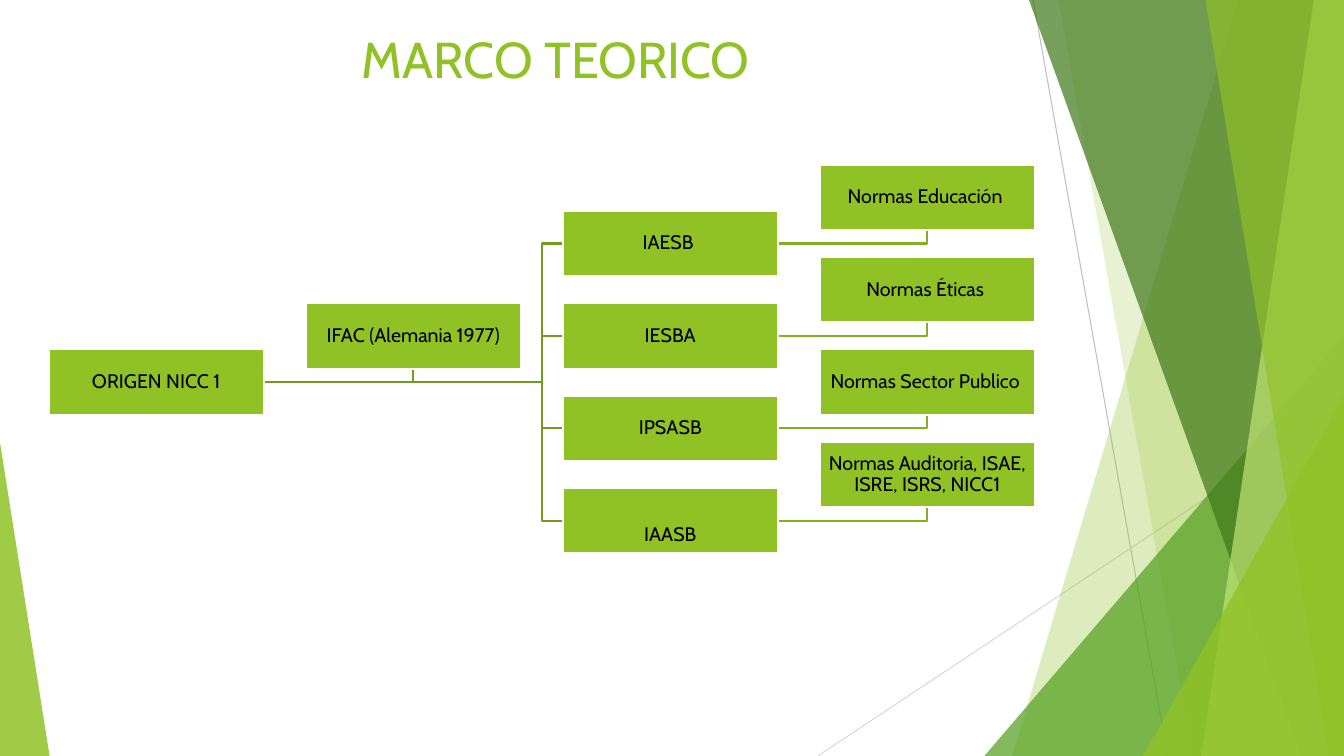
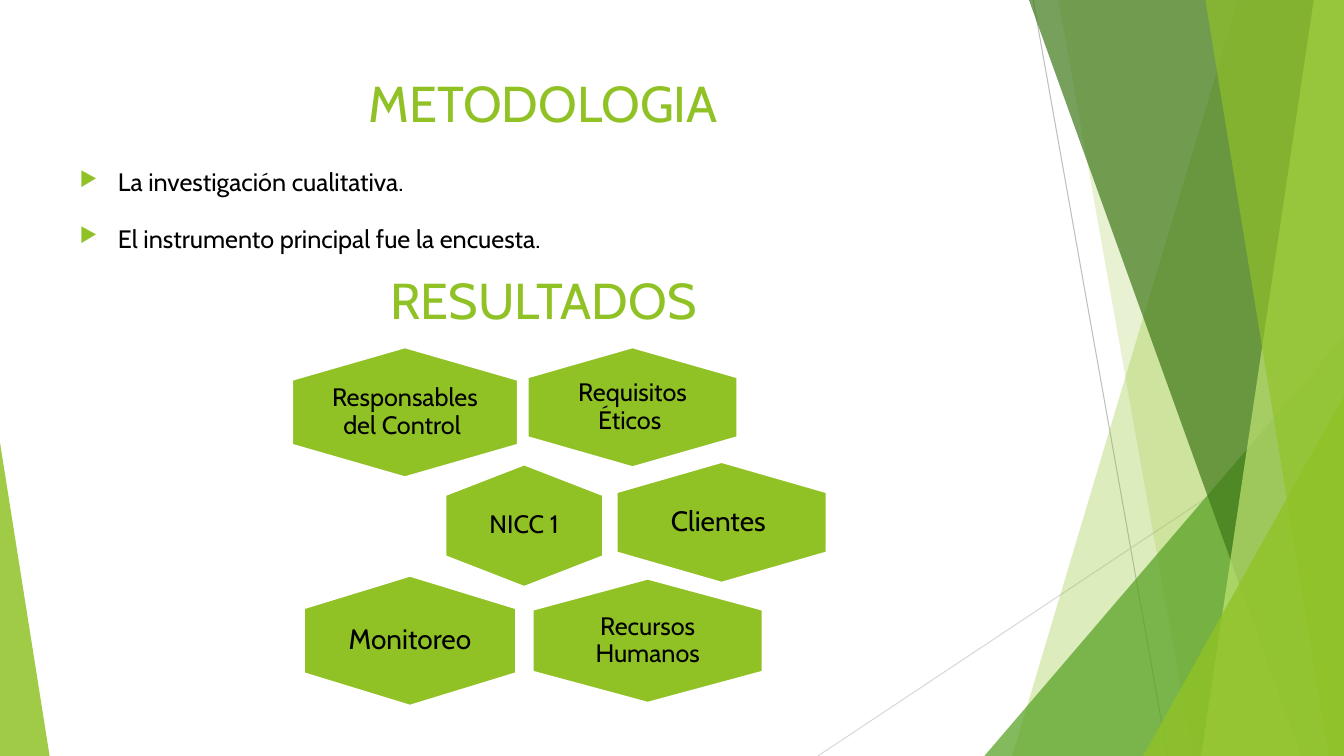
from lxml import etree
from pptx import Presentation, util as u
from pptx.dml.color import RGBColor
from pptx.enum import shapes, text
from pptx.oxml.ns import qn

FONT = "Cabin"
COLORS = {
    "green": "90C226", "leaf": "54A021", "forest": "3F7819", "lime": "C0E474",
    "trunk": "739B1E", "twig": "83B022", "silver": "BFBFBF", "mist": "D9D9D9",
    "white": "FFFFFF", "black": "000000",
}
COLUMNS, ROWS = 16, 9

# Organisation chart, in grid cells
BOX_WIDTH, BOX_HEIGHT = 2.56, 0.78
CHART_LEFT, CHART_TOP = 0.58, 1.96
COLUMN_STEP, ROW_STEP = 3.06, 0.55
BRANCH_GAP = 0.25

ORIGIN, FEDERATION = "ORIGEN NICC 1", "IFAC (Alemania 1977)"
BOARDS = {
    "IAESB ": "Normas Educación ",
    "IESBA": "Normas Éticas ",
    "IPSASB": "Normas Sector Publico ",
    "IAASB": "Normas Auditoria, ISAE, ISRE, ISRS, NICC1",
}

# Label, text size, centre column, centre row, width, height
RESULTS = [
    ("Requisitos Éticos ", 18, 7.53, 4.85, 2.5, 1.43),
    ("Responsables del Control ", 18, 4.82, 4.91, 2.69, 1.55),
    ("NICC 1", 18, 6.24, 6.26, 1.88, 1.46),
    ("Clientes ", 20, 8.59, 6.22, 2.5, 1.44),
    ("Recursos Humanos", 18, 7.71, 7.63, 2.74, 1.48),
    ("Monitoreo", 20, 4.88, 7.63, 2.53, 1.55),
]


def color(name):
    return RGBColor.from_string(COLORS[name])


class Deck:
    """Holds the style and the current slide; lengths are cells of a 16 by 9 grid."""

    def __init__(self):
        self.presentation = Presentation()
        self.presentation.slide_width = u.Inches(13.33)
        self.presentation.slide_height = u.Inches(7.5)
        self.cell = self.presentation.slide_width / COLUMNS
        self.slide = None

    def cells(self, *lengths):
        return [round(length * self.cell) for length in lengths]

    def new_slide(self):
        self.slide = self.presentation.slides.add_slide(self.presentation.slide_layouts[6])
        self.backdrop()

    def paint(self, shape, fill=None, opacity=100, line=None, width=1.5):
        shape.shadow.inherit = False
        if fill:
            shape.fill.solid()
            shape.fill.fore_color.rgb = color(fill)
            if opacity < 100:
                tint = next(shape.element.spPr.iter(qn("a:srgbClr")))
                etree.SubElement(tint, qn("a:alpha"), val=str(opacity * 1000))
        else:
            shape.fill.background()
        if line:
            shape.line.color.rgb = color(line)
            shape.line.width = u.Pt(width)
        else:
            shape.line.fill.background()

    def preset(self, kind, left, top, width, height, adjust=None, **style):
        shape = self.slide.shapes.add_shape(kind, *self.cells(left, top, width, height))
        if adjust is not None:
            shape.adjustments[0] = adjust
        self.paint(shape, **style)
        return shape

    def outline(self, points, close=False, **style):
        start, *others = [self.cells(*point) for point in points]
        builder = self.slide.shapes.build_freeform(*start)
        builder.add_line_segments(others, close=close)
        self.paint(builder.convert_to_shape(), **style)

    def hairline(self, start, end, line):
        connector = self.slide.shapes.add_connector(
            shapes.MSO_CONNECTOR.STRAIGHT, *self.cells(*start, *end))
        connector.line.color.rgb = color(line)
        connector.line.width = u.Pt(0.75)
        etree.SubElement(connector.element.spPr, qn("a:effectLst"))

    def triangle(self, left, top, width, fill, opacity, apex):
        self.preset(shapes.MSO_SHAPE.ISOSCELES_TRIANGLE, left, top, width, ROWS - top,
                    adjust=apex, fill=fill, opacity=opacity)

    def band(self, top_column, bottom_column, fill, opacity):
        """Fill the area from a slanted edge to the right side of the slide."""
        self.outline([(top_column, 0), (COLUMNS, 0), (COLUMNS, ROWS), (bottom_column, ROWS)],
                     close=True, fill=fill, opacity=opacity)

    def backdrop(self):
        self.hairline((12.3, 0), (13.9, ROWS), "silver")
        self.hairline((COLUMNS, 4.84), (9.74, ROWS), "mist")
        self.band(14.74, 12.05, "green", 30)
        self.band(12.6, 14.2, "green", 20)
        self.triangle(11.72, 4, 4.28, "leaf", 72, apex=1)
        self.band(12.25, 15.49, "forest", 70)
        self.band(15.64, 14.3, "lime", 70)
        self.band(14.35, 15.82, "green", 65)
        self.triangle(13.61, 4.72, 2.39, "green", 80, apex=1)
        self.triangle(0, 5.27, 0.59, "green", 85, apex=0)

    def text_run(self, paragraph, words, size, ink="black"):
        run = paragraph.add_run()
        run.text = words
        run.font.name = FONT
        run.font.size = u.Pt(size)
        run.font.color.rgb = color(ink)

    def label(self, shape, words, size, inset=0.0, lowered=0.0):
        """Centre words in a shape, moved down by the given length."""
        frame = shape.text_frame
        frame.word_wrap = True
        frame.vertical_anchor = text.MSO_ANCHOR.MIDDLE
        side, top = self.cells(inset, inset + 2 * lowered)
        frame.margin_left = frame.margin_right = frame.margin_bottom = side
        frame.margin_top = top
        paragraph = frame.paragraphs[0]
        paragraph.alignment = text.PP_ALIGN.CENTER
        paragraph.line_spacing = 0.9
        self.text_run(paragraph, words, size)

    def text_box(self, left, top, width, height):
        box = self.slide.shapes.add_textbox(*self.cells(left, top, width, height))
        box.text_frame.word_wrap = True
        return box

    def title(self, words, left, top):
        paragraph = self.text_box(left, top, 11.28, 1.12).text_frame.paragraphs[0]
        paragraph.alignment = text.PP_ALIGN.CENTER
        self.text_run(paragraph, words, 36, "green")

    def bullets(self, items, left, top, width, height):
        frame = self.text_box(left, top, width, height).text_frame
        for index, item in enumerate(items):
            paragraph = frame.add_paragraph() if index else frame.paragraphs[0]
            paragraph.line_spacing = 1.4
            paragraph.space_before = u.Pt(10)
            self.text_run(paragraph, item, 18)
            properties = paragraph._p.get_or_add_pPr()
            indent = u.Inches(0.38)
            properties.set("marL", str(indent))
            properties.set("indent", str(-indent))
            tint = etree.SubElement(properties, qn("a:buClr"))
            etree.SubElement(tint, qn("a:srgbClr"), val=COLORS["green"])
            etree.SubElement(properties, qn("a:buSzPct"), val="80000")
            etree.SubElement(properties, qn("a:buChar"), char="▶")

    def chart_box(self, words, place, lowered=0.0):
        column, row = place
        box = self.preset(shapes.MSO_SHAPE.RECTANGLE, CHART_LEFT + column * COLUMN_STEP,
                          CHART_TOP + row * ROW_STEP, BOX_WIDTH, BOX_HEIGHT,
                          fill="green", line="white")
        self.label(box, words, 14, inset=0.01, lowered=lowered)

    def chart_link(self, parent, child, line, from_below=False):
        """Link a box's right side to another's left side, or to its bottom."""
        (start, start_row), (end, end_row) = [
            (CHART_LEFT + column * COLUMN_STEP, CHART_TOP + row * ROW_STEP + BOX_HEIGHT / 2)
            for column, row in (parent, child)]
        points = [(start + BOX_WIDTH, start_row)]
        if from_below:
            middle = end + BOX_WIDTH / 2
            points += [(middle, start_row), (middle, end_row + BOX_HEIGHT / 2)]
        else:
            bend = end - BRANCH_GAP
            points += [(bend, start_row), (bend, end_row), (end, end_row)]
        self.outline(points, line=line)

    def hexagon(self, words, size, column, row, width, height):
        """Draw a hexagon with its points up and down, and its label."""
        shape = self.preset(shapes.MSO_SHAPE.HEXAGON, column - height / 2, row - width / 2,
                            height, width, adjust=0.25, fill="green", line="white")
        shape.rotation = 90
        label_width, label_height = width * 2 / 3, height * 2 / 3
        box = self.text_box(column - label_width / 2, row - label_height / 2,
                            label_width, label_height)
        self.label(box, words, size)


def add_framework(deck):
    deck.new_slide()
    deck.title("MARCO TEORICO ", 1.04, 0.28)
    places = {ORIGIN: (0, 4), FEDERATION: (1, 3)}
    for index, (board, standard) in enumerate(BOARDS.items()):
        places[board] = (2, 2 * index + 1)
        places[standard] = (3, 2 * index)
    deck.chart_link(places[ORIGIN], places[FEDERATION], "trunk", from_below=True)
    for board, standard in BOARDS.items():
        deck.chart_link(places[ORIGIN], places[board], "trunk")
        deck.chart_link(places[board], places[standard], "twig", from_below=True)
    for words, place in places.items():
        deck.chart_box(words, place, lowered=0.17 if words == "IAASB" else 0)


def add_method_and_results(deck):
    deck.new_slide()
    deck.title("METODOLOGIA", 0.83, 0.8)
    deck.bullets(["La investigación cualitativa.", "El instrumento principal fue la encuesta."],
                 0.83, 1.78, 11.28, 1.3)
    deck.title("RESULTADOS", 0.83, 3.14)
    for result in RESULTS:
        deck.hexagon(*result)


def main():
    deck = Deck()
    add_framework(deck)
    add_method_and_results(deck)
    deck.presentation.save("out.pptx")


if __name__ == "__main__":
    main()
